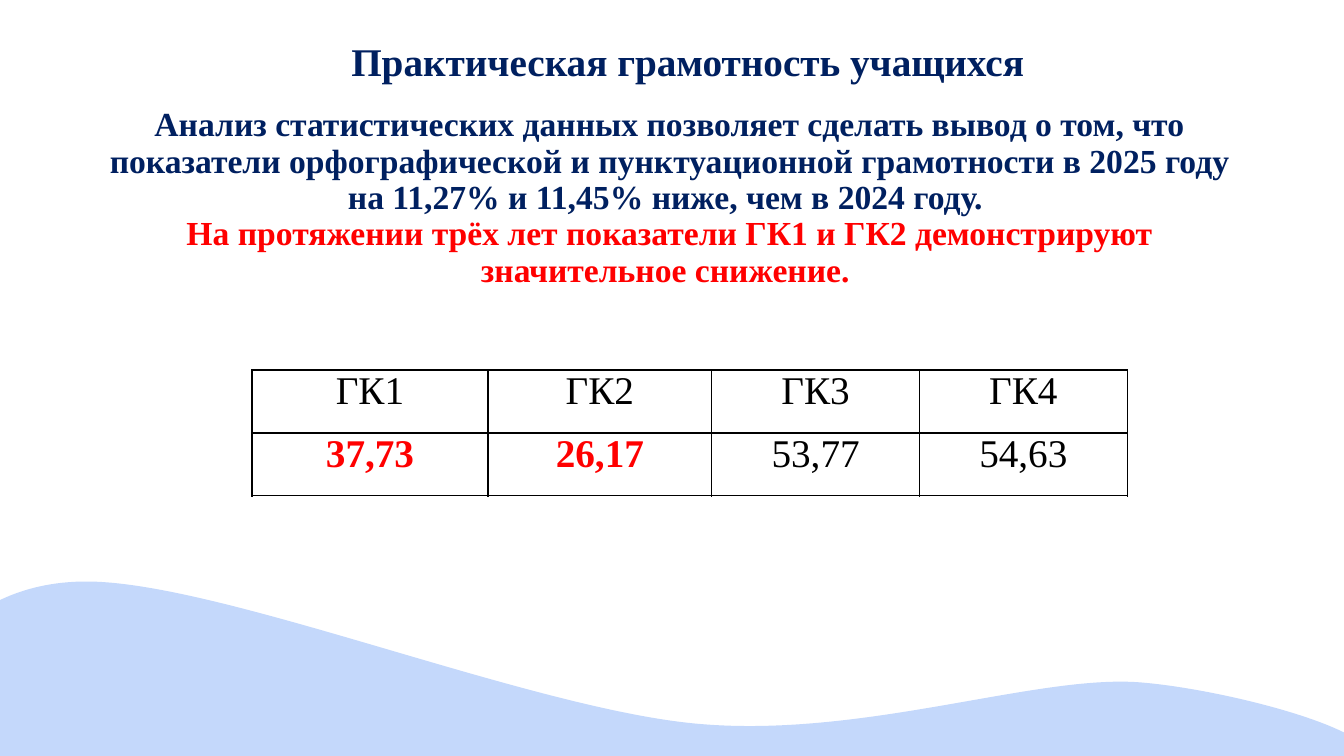
"""Build the slide on pupils' practical literacy with its score table."""
from math import cos, radians, sin

from pptx import Presentation
from pptx.dml.color import RGBColor
from pptx.enum.text import MSO_ANCHOR, MSO_AUTO_SIZE, PP_ALIGN
from pptx.oxml import parse_xml
from pptx.oxml.ns import nsdecls, qn
from pptx.util import Inches, Pt

WIDTH, HEIGHT = 13.33, 7.5
NAVY, RED, BLACK, PALE_BLUE = "002060", "FF0000", "000000", "C4D8FB"


def rgb(value):
    return RGBColor.from_string(value)


def write(paragraph, text, color, **font_format):
    paragraph.alignment = PP_ALIGN.CENTER
    run = paragraph.add_run()
    run.text = text
    run.font.color.rgb = rgb(color)
    for attribute, value in {"name": "Times New Roman", **font_format}.items():
        setattr(run.font, attribute, value)


deck = Presentation()
deck.slide_width, deck.slide_height = Inches(WIDTH), Inches(HEIGHT)
slide = deck.slides.add_slide(deck.slide_layouts[5])

wave_left, wave_top, wave_width, wave_height, wave_turn = 1.06, 1.83, 10.24, 10.81, 48.6
wave_start = (0.84, 5.77)
wave_curves = [
    [(2.12, 5.76), (5.02, 6.94), (6.73, 7.16)],
    [(8.43, 7.38), (10.25, 6.68), (11.32, 6.77)],
    [(12.39, 6.86), (14.51, 7.47), (13.13, 7.71)],
    [(11.75, 7.94), (5.13, 8.09), (3.06, 8.15)],
    [(1, 8.22), (1.41, 8.24), (0.74, 8.09)],
    [(0.07, 7.93), (-0.97, 7.61), (-0.96, 7.22)],
    [(-0.94, 6.83), (-0.45, 5.78), wave_start],
]
UNITS = 1000
right, bottom = round(wave_width * UNITS), round(wave_height * UNITS)
builder = slide.shapes.build_freeform(0, 0, scale=Inches(1) / UNITS)
builder.add_line_segments([(right, 0), (right, bottom), (0, bottom)], close=True)
wave = builder.convert_to_shape(Inches(wave_left), Inches(wave_top))
wave.rotation = wave_turn
wave.shadow.inherit = False
wave.fill.solid()
wave.fill.fore_color.rgb = rgb(PALE_BLUE)
wave.line.fill.background()
outline = next(wave._element.iter(qn("a:path")))
for segment in list(outline):
    outline.remove(segment)
turn = radians(wave_turn)
for tag, points in [("moveTo", [wave_start]), *(("cubicBezTo", curve) for curve in wave_curves),
                    ("close", [])]:
    marks = ""
    for x, y in points:
        dx, dy = x - wave_left - wave_width / 2, y - wave_top - wave_height / 2
        local_x = dx * cos(turn) + dy * sin(turn) + wave_width / 2
        local_y = dy * cos(turn) - dx * sin(turn) + wave_height / 2
        marks += f'<a:pt x="{round(local_x * UNITS)}" y="{round(local_y * UNITS)}"/>'
    outline.append(parse_xml(f'<a:{tag} {nsdecls("a")}>{marks}</a:{tag}>'))
slide.shapes._spTree.insert(2, wave._element)

findings = slide.shapes.title
findings.left, findings.top = Inches(0.85), Inches(1.01)
findings.width, findings.height = Inches(11.58), Inches(1.92)
findings_text = findings.text_frame
for attribute, value in {"word_wrap": True, "auto_size": MSO_AUTO_SIZE.NONE,
                         "vertical_anchor": MSO_ANCHOR.MIDDLE}.items():
    setattr(findings_text, attribute, value)
statement = findings_text.paragraphs[0]
statement.line_spacing = 0.9
write(statement, "Анализ статистических данных позволяет сделать вывод о том, что показатели "
      "орфографической и пунктуационной грамотности в 2025 году на 11,27% и 11,45% "
      "ниже, чем в 2024 году. ", NAVY, size=Pt(24), bold=True)
statement.add_line_break()
write(statement, "На протяжении трёх лет показатели ГК1 и ГК2 демонстрируют "
      "значительное снижение. ", RED, size=Pt(24), bold=True)

scores = [("ГК1", "37,73", RED), ("ГК2", "26,17", RED),
          ("ГК3", "53,77", BLACK), ("ГК4", "54,63", BLACK)]
column_widths = [2.34, 2.22, 2.06, 2.06]
score_table = slide.shapes.add_table(2, len(scores), Inches(2.5), Inches(3.67),
                                     Inches(sum(column_widths)), Inches(1.25)).table
score_table.first_row = score_table.horz_banding = False
for row in score_table.rows:
    row.height = Inches(1.25 / 2)
for column, (criterion, score, score_color) in enumerate(scores):
    score_table.columns[column].width = Inches(column_widths[column])
    for row, (text, color) in enumerate([(criterion, BLACK), (score, score_color)]):
        cell = score_table.cell(row, column)
        for attribute, value in {"margin_left": Inches(0.07), "margin_right": Inches(0.07),
                                 "margin_top": 0, "margin_bottom": 0}.items():
            setattr(cell, attribute, value)
        write(cell.text_frame.paragraphs[0], text, color, size=Pt(28), bold=color == RED)
        properties = cell._tc.get_or_add_tcPr()
        for side in ("lnL", "lnR", "lnT", "lnB"):
            properties.append(parse_xml(
                f'<a:{side} {nsdecls("a")} w="{Pt(1)}"><a:solidFill>'
                f'<a:srgbClr val="{BLACK}"/></a:solidFill></a:{side}>'))
        cell.fill.background()

heading = slide.shapes.add_textbox(Inches(3.33), Inches(0.32), Inches(6.98), Inches(0.57))
heading.text_frame.word_wrap = True
heading.text_frame.auto_size = MSO_AUTO_SIZE.SHAPE_TO_FIT_TEXT
write(heading.text_frame.paragraphs[0], "Практическая грамотность учащихся", NAVY,
      size=Pt(28), bold=True)

deck.save("out.pptx")
